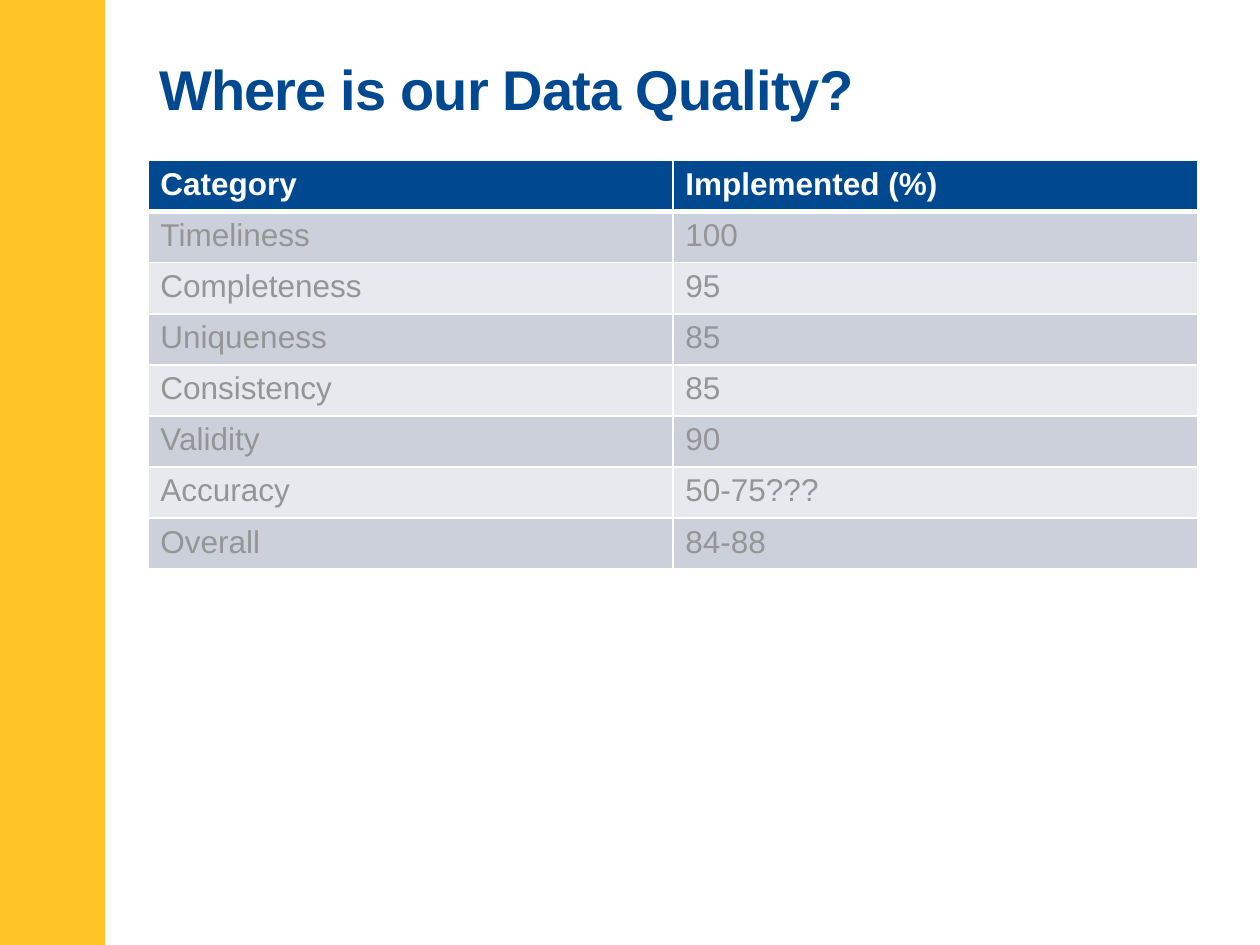
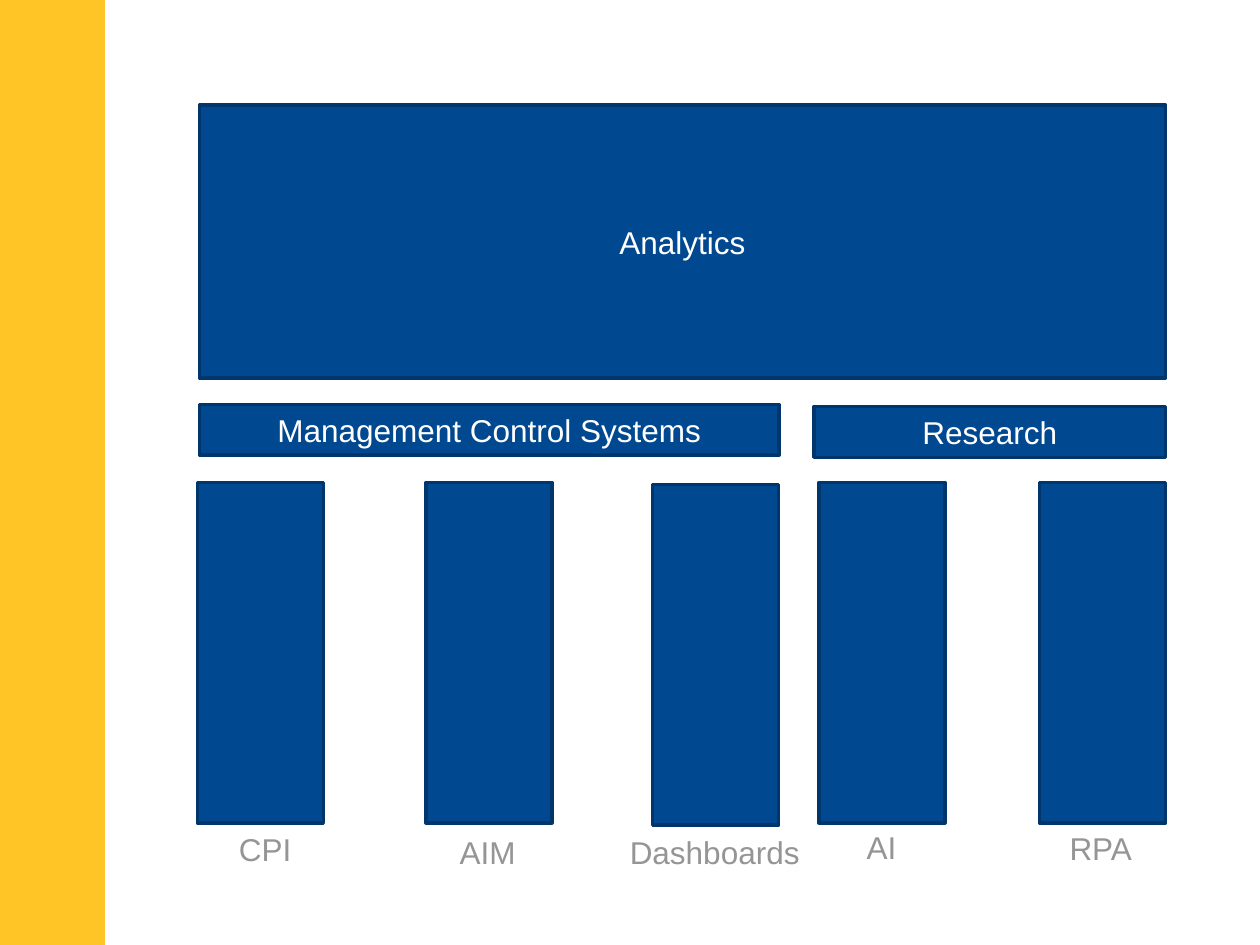
"""Build two slides: a data quality table and an analytics pillar diagram."""
from lxml.etree import SubElement
from pptx import Presentation
from pptx.dml.color import RGBColor
from pptx.enum.shapes import MSO_SHAPE
from pptx.enum.text import MSO_ANCHOR, MSO_AUTO_SIZE, PP_ALIGN
from pptx.oxml.ns import qn
from pptx.util import Pt

BLUE = RGBColor(0x00, 0x49, 0x90)
DARK_BLUE = RGBColor(0x00, 0x36, 0x6B)
YELLOW = RGBColor(0xFF, 0xC4, 0x25)
GREY = RGBColor(0x95, 0x95, 0x95)
WHITE = RGBColor(0xFF, 0xFF, 0xFF)
BAND_DARK = RGBColor(0xCC, 0xD0, 0xDB)
BAND_LIGHT = RGBColor(0xE7, 0xE9, 0xEE)


def write_text(text_frame, text, color, size=18, bold=False):
    text_frame.text = text
    font = text_frame.paragraphs[0].runs[0].font
    font.name = "Arial"
    font.size = Pt(size)
    font.bold = bold
    font.color.rgb = color


def add_box(slide, kind, left, top, width, height, fill, line=None):
    shape = slide.shapes.add_shape(kind, Pt(left), Pt(top), Pt(width), Pt(height))
    shape.shadow.inherit = False
    shape.fill.solid()
    shape.fill.fore_color.rgb = fill
    if line is None:
        shape.line.fill.background()
    else:
        shape.line.color.rgb = line
        shape.line.width = Pt(2)
    return shape


presentation = Presentation()
presentation.slide_width = Pt(720)
presentation.slide_height = Pt(540)
blank_layout = presentation.slide_layouts[6]
table_slide = presentation.slides.add_slide(blank_layout)
pillar_slide = presentation.slides.add_slide(blank_layout)
for slide in (table_slide, pillar_slide):
    add_box(slide, MSO_SHAPE.RECTANGLE, 0, 0, 60, 540, YELLOW)

title = table_slide.shapes.add_textbox(Pt(84), Pt(24), Pt(600), Pt(42))
title.text_frame.word_wrap = True
title.text_frame.margin_top = Pt(7)
write_text(title.text_frame, "Where is our Data Quality?", BLUE, size=32, bold=True)
title.text_frame.paragraphs[0].runs[0].font._element.set("spc", "-50")

quality_rows = [
    ("Category", "Implemented (%)"),
    ("Timeliness", "100"),
    ("Completeness", "95"),
    ("Uniqueness", "85"),
    ("Consistency", "85"),
    ("Validity", "90"),
    ("Accuracy", "50-75???"),
    ("Overall", "84-88"),
]
table = table_slide.shapes.add_table(
    len(quality_rows), 2, Pt(84.5), Pt(91.7), Pt(600), Pt(233.6)
).table
for row_index, row_texts in enumerate(quality_rows):
    table.rows[row_index].height = Pt(29.2)
    is_header = row_index == 0
    fill = BLUE if is_header else BAND_DARK if row_index % 2 else BAND_LIGHT
    border_widths = {
        "a:lnL": 1,
        "a:lnR": 1,
        "a:lnT": 3 if row_index == 1 else 1,
        "a:lnB": 3 if is_header else 1,
    }
    for column_index, text in enumerate(row_texts):
        cell = table.cell(row_index, column_index)
        write_text(cell.text_frame, text, WHITE if is_header else GREY, bold=is_header)
        cell_properties = cell._tc.get_or_add_tcPr()
        for tag, width in border_widths.items():
            border = SubElement(cell_properties, qn(tag), w=str(Pt(width)))
            border_fill = SubElement(border, qn("a:solidFill"))
            SubElement(border_fill, qn("a:srgbClr"), val=str(WHITE))
        cell.fill.solid()
        cell.fill.fore_color.rgb = fill

beams = [
    ("Analytics", MSO_SHAPE.RECTANGLE, 114, 60, 552, 156),
    ("Management Control Systems", MSO_SHAPE.FLOWCHART_PROCESS, 114, 231.1, 331.2, 29),
    ("Research", MSO_SHAPE.FLOWCHART_PROCESS, 465.1, 232.3, 200.9, 29),
]
for text, kind, left, top, width, height in beams:
    beam = add_box(pillar_slide, kind, left, top, width, height, BLUE, DARK_BLUE)
    beam.text_frame.vertical_anchor = MSO_ANCHOR.MIDDLE
    write_text(beam.text_frame, text, WHITE)
    beam.text_frame.paragraphs[0].alignment = PP_ALIGN.CENTER

pillars = [
    ("CPI", 112.8, 275.8, 129.4, 470.9, 44.6),
    ("AIM", 243.4, 275.8, 255.6, 472.5, 46.8),
    ("Dashboards", 373, 277, 352.8, 472.5, 112.3),
    ("AI", 468, 275.8, 488.2, 469.6, 31.7),
    ("RPA", 594, 275.8, 604.1, 470.2, 50.4),
]
for text, left, top, label_left, label_top, label_width in pillars:
    add_box(pillar_slide, MSO_SHAPE.FLOWCHART_PROCESS, left, top, 72, 194.4, BLUE, DARK_BLUE)
    label = pillar_slide.shapes.add_textbox(
        Pt(label_left), Pt(label_top), Pt(label_width), Pt(29)
    )
    label.text_frame.word_wrap = False
    label.text_frame.auto_size = MSO_AUTO_SIZE.SHAPE_TO_FIT_TEXT
    write_text(label.text_frame, text, GREY)

presentation.save("out.pptx")
